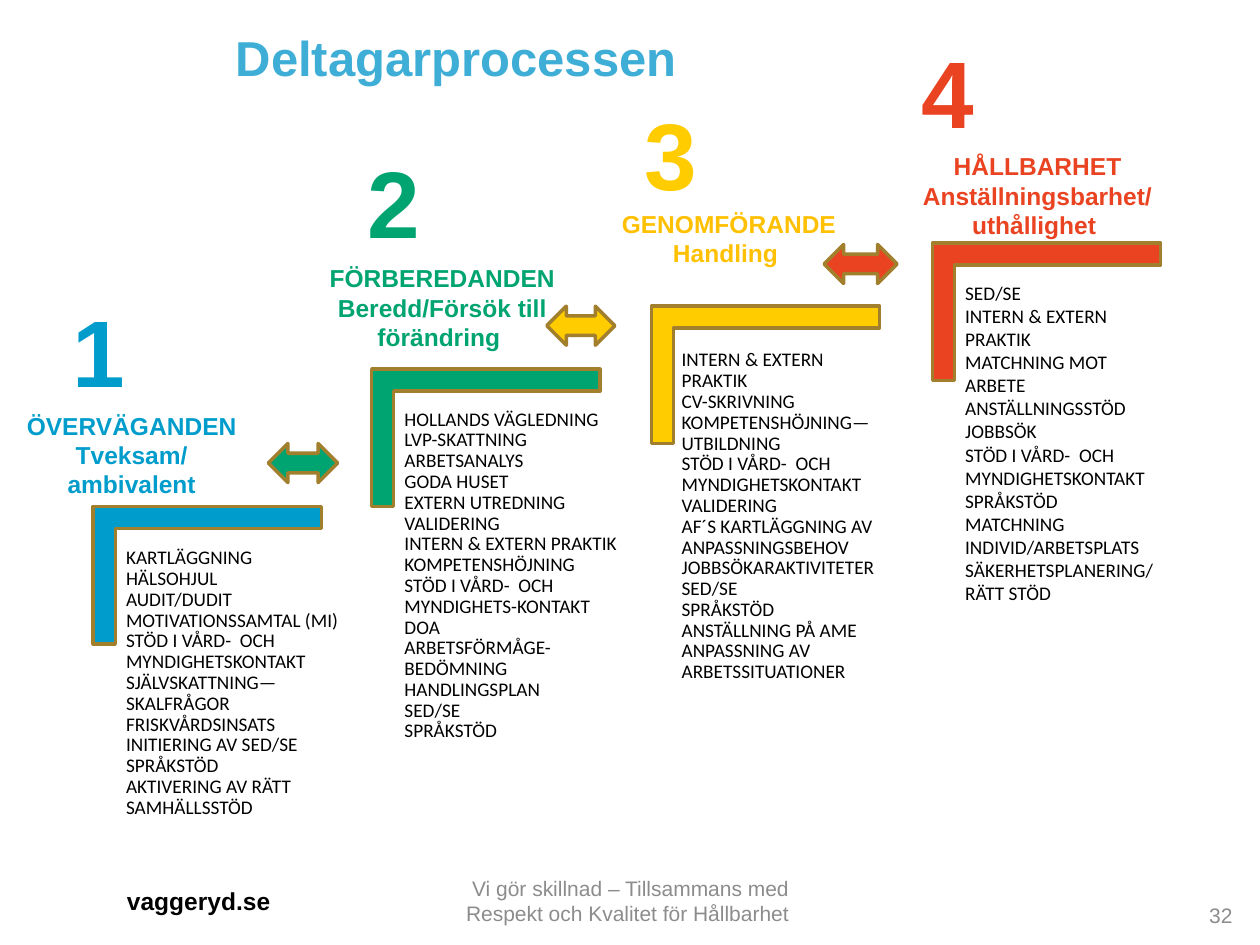
from dataclasses import dataclass
from typing import Optional

from lxml.etree import SubElement
from pptx import Presentation
from pptx.dml.color import RGBColor
from pptx.enum.shapes import MSO_SHAPE as Shape
from pptx.enum.text import MSO_ANCHOR as Anchor, MSO_AUTO_SIZE as AutoSize, PP_ALIGN as Align
from pptx.oxml.ns import qn
from pptx.util import Inches, Pt

EDGE = "A17F2D"
BLACK = "000000"
GREY = "8C8C8C"
COMPARISON_LAYOUT = 4  # a title and four body placeholders
Frame = tuple[float, float, float, float]


@dataclass
class Step:
    color: str
    number_at: tuple[float, float]
    heading: list[str]
    heading_color: str
    heading_frame: Frame
    corner_at: tuple[float, float]
    items: list[str]
    list_frame: Frame
    line_spacing: float = 0.9
    inset: tuple[float, float] = (0.05, 0.05)
    arrow_frame: Optional[Frame] = None


STEPS = [
    Step("009DCC", (0.43, 2.28),
         ["ÖVERVÄGANDEN", "Tveksam/", "ambivalent"], "009DCC", (-0.08, 3.21, 2.25, 0.81),
         (1.1, 3.66),
         ["KARTLÄGGNING", "HÄLSOHJUL", "AUDIT/DUDIT", "MOTIVATIONSSAMTAL (MI)",
          "STÖD I VÅRD-  OCH MYNDIGHETSKONTAKT", "SJÄLVSKATTNING—SKALFRÅGOR",
          "FRISKVÅRDSINSATS", "INITIERING AV SED/SE", "SPRÅKSTÖD",
          "AKTIVERING AV RÄTT SAMHÄLLSSTÖD"],
         (0.95, 4.3, 2.04, 2.39)),
    Step("00A470", (2.77, 1.09),
         ["FÖRBEREDANDEN", "Beredd/Försök till förändring "], "00A470", (2.15, 2.04, 2.72, 0.81),
         (3.31, 2.57),
         ["HOLLANDS VÄGLEDNING", "LVP-SKATTNING", "ARBETSANALYS", "GODA HUSET",
          "EXTERN UTREDNING", "VALIDERING", "INTERN & EXTERN PRAKTIK", "KOMPETENSHÖJNING",
          "STÖD I VÅRD-  OCH MYNDIGHETS-KONTAKT", "DOA", "ARBETSFÖRMÅGE-BEDÖMNING",
          "HANDLINGSPLAN", "SED/SE", "SPRÅKSTÖD"],
         (3.16, 3.2, 1.97, 2.63), arrow_frame=(2.13, 3.52, 0.55, 0.31)),
    Step("FFCC00", (4.97, 0.71),
         ["GENOMFÖRANDE Handling "], "FFC000", (4.66, 1.61, 2.25, 0.57),
         (5.53, 2.07),
         ["INTERN & EXTERN PRAKTIK", "CV-SKRIVNING", "KOMPETENSHÖJNING—UTBILDNING",
          "STÖD I VÅRD-  OCH MYNDIGHETSKONTAKT", "VALIDERING", "AF´S KARTLÄGGNING AV",
          "ANPASSNINGSBEHOV", "JOBBSÖKARAKTIVITETER", "SED/SE", "SPRÅKSTÖD",
          "ANSTÄLLNING PÅ AME", "ANPASSNING AV ARBETSSITUATIONER"],
         (5.36, 2.73, 1.64, 1.44), arrow_frame=(4.34, 2.43, 0.54, 0.31)),
    Step("EA4322", (7.17, 0.22),
         ["HÅLLBARHET Anställningsbarhet/", "uthållighet "], "EA4322", (7.11, 1.15, 2.25, 0.81),
         (7.76, 1.57),
         ["SED/SE", "INTERN & EXTERN PRAKTIK", "MATCHNING MOT ARBETE", "ANSTÄLLNINGSSTÖD",
          "JOBBSÖK", "STÖD I VÅRD-  OCH MYNDIGHETSKONTAKT", "SPRÅKSTÖD",
          "MATCHNING INDIVID/ARBETSPLATS", "SÄKERHETSPLANERING/RÄTT STÖD"],
         (7.56, 2.18, 1.73, 3), line_spacing=1.0, inset=(0.1, 0.05),
         arrow_frame=(6.54, 1.94, 0.58, 0.31)),
]


def rgb(color: str) -> RGBColor:
    return RGBColor.from_string(color)


def place(box, frame: Frame) -> None:
    box.left, box.top, box.width, box.height = map(Inches, frame)


def style(para, size: float, color: str, bold: bool = False, align=Align.LEFT,
          name: str = "Arial") -> None:
    para.alignment = align
    font = para.font
    font.name, font.size, font.bold = name, Pt(size), bold
    font.color.rgb = rgb(color)


def add_text(page, frame: Frame, lines: list[str], size: float, color: str,
             bold: bool = False, align=Align.LEFT, anchor=Anchor.TOP) -> None:
    text = page.shapes.add_textbox(*map(Inches, frame)).text_frame
    text.word_wrap = True
    text.vertical_anchor = anchor
    text.text = "\n".join(lines)
    for para in text.paragraphs:
        style(para, size, color, bold, align)


def add_outlined(page, kind, frame: Frame, color: str):
    shape = page.shapes.add_shape(kind, *map(Inches, frame))
    shape.shadow.inherit = False
    shape.fill.solid()
    shape.fill.fore_color.rgb = rgb(color)
    shape.line.color.rgb = rgb(EDGE)
    shape.line.width = Pt(2)
    return shape


def fill_title(title, words: str) -> None:
    place(title, (1.75, 0.17, 3.74, 0.57))
    text = title.text_frame
    text.text = words
    text.word_wrap = False
    text.auto_size = AutoSize.NONE
    text.vertical_anchor = Anchor.TOP
    style(text.paragraphs[0], 28, "3EAED6", True, Align.CENTER)


def fill_list(body, step: Step) -> None:
    """Write the items as unbulleted lines of one paragraph."""
    place(body, step.list_frame)
    text = body.text_frame
    text.word_wrap = True
    text.auto_size = AutoSize.NONE
    text.vertical_anchor = Anchor.TOP
    text.margin_left = text.margin_right = Inches(step.inset[0])
    text.margin_top = text.margin_bottom = Inches(step.inset[1])
    para = text.paragraphs[0]
    para.text = "\v".join(step.items)
    para.line_spacing = step.line_spacing
    para.space_before = Pt(0)
    properties = para._p.get_or_add_pPr()
    properties.set("marL", "0")
    properties.set("indent", "0")
    SubElement(properties, qn("a:buNone"))
    style(para, 11, BLACK, name="Calibri")


def draw_step(page, number: int, step: Step, body) -> None:
    corner = add_outlined(page, Shape.CORNER, (*step.corner_at, 1.09, 1.81), step.color)
    corner.rotation = 90
    corner.adjustments[0] = corner.adjustments[1] = 0.16
    if step.arrow_frame:
        add_outlined(page, Shape.LEFT_RIGHT_ARROW, step.arrow_frame, step.color)
    fill_list(body, step)
    add_text(page, (*step.number_at, 0.71, 1.01), [str(number)], 54, step.color,
             True, Align.CENTER)
    add_text(page, step.heading_frame, step.heading, 14, step.heading_color,
             True, Align.CENTER)


def main() -> None:
    deck = Presentation()
    deck.slide_width, deck.slide_height = Inches(10), Inches(7.5)
    page = deck.slides.add_slide(deck.slide_layouts[COMPARISON_LAYOUT])
    title, *bodies = page.placeholders
    fill_title(title, "Deltagarprocessen")
    for number, (step, body) in enumerate(zip(STEPS, bodies), start=1):
        draw_step(page, number, step, body)
    add_text(page, (0.91, 6.98, 2.44, 0.34), ["vaggeryd.se"], 14, BLACK, True)
    add_text(page, (3.42, 6.95, 3.17, 0.4),
             ["Vi gör skillnad – Tillsammans med Respekt och Kvalitet för Hållbarhet "],
             12, GREY, align=Align.CENTER, anchor=Anchor.MIDDLE)
    add_text(page, (7.55, 7.06, 2.33, 0.4), ["32"], 12, GREY,
             align=Align.RIGHT, anchor=Anchor.MIDDLE)
    deck.save("out.pptx")


if __name__ == "__main__":
    main()
